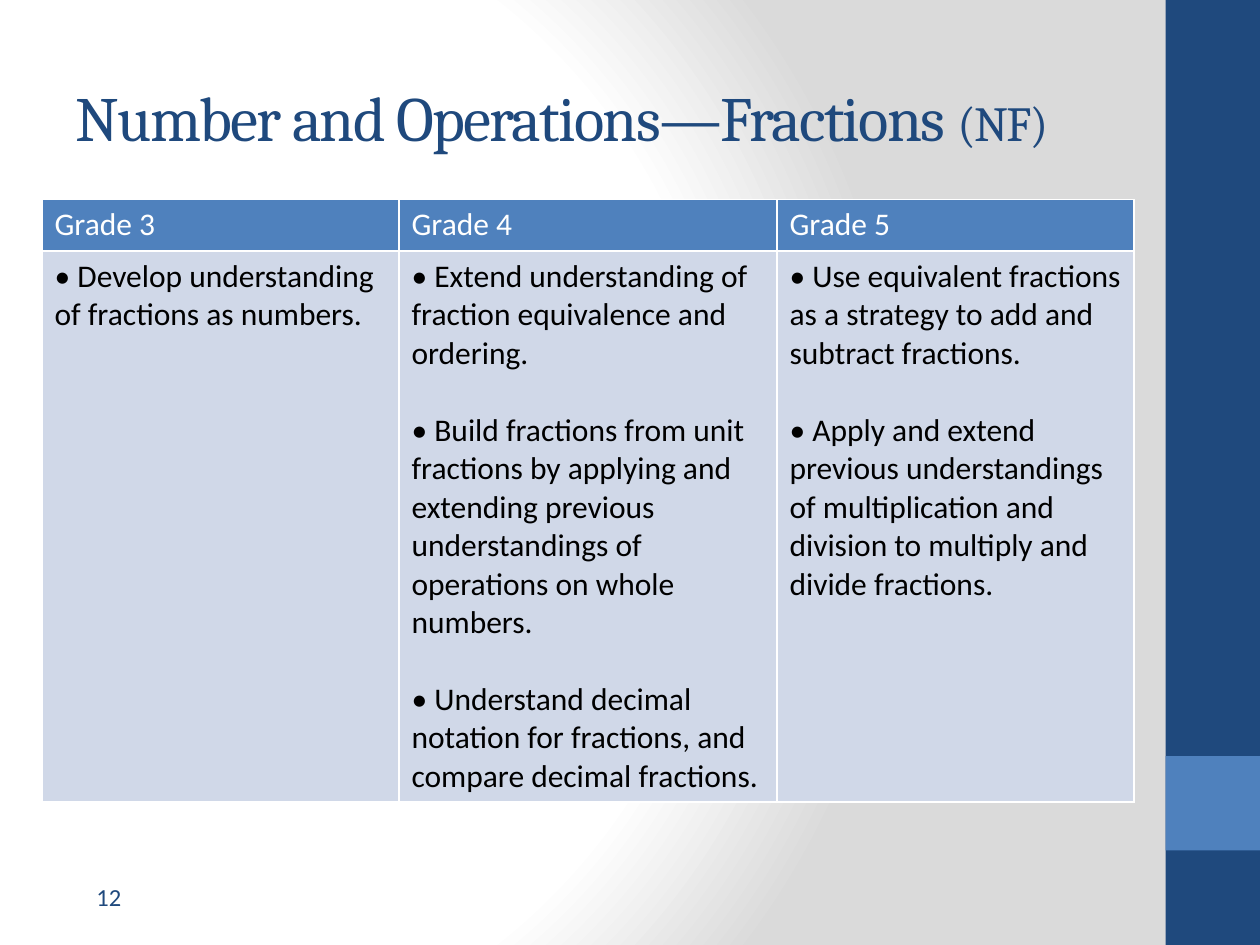
from lxml import etree
from pptx import Presentation
from pptx import util as u
from pptx.dml.color import RGBColor
from pptx.enum import shapes, text
from pptx.oxml import parse_xml
from pptx.oxml.ns import nsdecls, qn

NAVY, BLUE, PALE, WHITE, BLACK = "1F497D", "4F81BD", "D0D8E8", "FFFFFF", "000000"
GRADES = {
    "Grade 3": ["Develop understanding of fractions as numbers."],
    "Grade 4": [
        "Extend understanding of fraction equivalence and ordering.",
        "Build fractions from unit fractions by applying and extending previous "
        "understandings of operations on whole numbers.",
        "Understand decimal notation for fractions, and compare decimal fractions.",
    ],
    "Grade 5": [
        "Use equivalent fractions as a strategy to add and subtract fractions.",
        "Apply and extend previous understandings of multiplication and division "
        "to multiply and divide fractions.",
    ],
}


def color(value):
    return RGBColor.from_string(value)


def points(*values):
    return [u.Pt(value) for value in values]


def paint(item, value):
    item.fill.solid()
    item.fill.fore_color.rgb = color(value)


def add_span(para, words, value, **formats):
    span = para.add_run()
    span.text = words
    span.font.color.rgb = color(value)
    for name, setting in formats.items():
        setattr(span.font, name, setting)
    return span


def set_background(page):
    page.background.fill.gradient()
    stops = "".join(
        f'<a:gs pos="{place * 1000}"><a:srgbClr val="{value}"/></a:gs>'
        for place, value in [(0, WHITE), (75, WHITE), (100, "DADADA")]
    )
    gradient = parse_xml(
        f'<a:gradFill {nsdecls("a")} rotWithShape="1"><a:gsLst>{stops}</a:gsLst>'
        '<a:path path="circle"><a:fillToRect l="20000" t="50000" r="100000" b="50000"/>'
        "</a:path></a:gradFill>"
    )
    old = page.element.find(".//" + qn("a:gradFill"))
    old.getparent().replace(old, gradient)


def add_sidebar(page, left, top, width, height):
    for offset, size, value in [(0, height, NAVY), (height * 0.8, width, BLUE)]:
        band = page.shapes.add_shape(
            shapes.MSO_SHAPE.RECTANGLE, *points(left, top + offset, width, size)
        )
        band.shadow.inherit = False
        band.line.fill.background()
        paint(band, value)


def place_title(page, left, top, width, height):
    title = page.shapes.title
    title.left, title.top, title.width, title.height = points(left, top, width, height)
    title.text_frame.vertical_anchor = text.MSO_ANCHOR.MIDDLE
    para = title.text_frame.paragraphs[0]
    para.alignment = text.PP_ALIGN.LEFT
    for words, size in [("Number and Operations—Fractions ", 36), ("(NF)", 28)]:
        span = add_span(para, words, NAVY, name="Cambria", size=u.Pt(size))
        span.font._element.set("spc", "-100")


def add_borders(cell):
    properties = cell._tc.get_or_add_tcPr()
    for index, side in enumerate(["lnL", "lnR", "lnT", "lnB"]):
        line = etree.Element(qn(f"a:{side}"), w=str(u.Pt(1)))
        fill = etree.SubElement(line, qn("a:solidFill"))
        etree.SubElement(fill, qn("a:srgbClr"), val=WHITE)
        properties.insert(index, line)


def fill_cell(cell, lines, fill, value):
    paint(cell, fill)
    add_borders(cell)
    frame = cell.text_frame
    for index, words in enumerate(lines):
        para = frame.add_paragraph() if index else frame.paragraphs[0]
        para.space_before = u.Pt(22 if index else 0)
        add_span(para, words, value, name="Calibri", size=u.Pt(18))


def add_grades(page, left, top, width, height):
    header, middle = 29.5, 216
    side = (width - middle) / 2
    table = page.shapes.add_table(
        2, len(GRADES), *points(left, top, width, height)
    ).table
    for column, size in zip(table.columns, [side, middle, side]):
        column.width = u.Pt(size)
    for row, size in zip(table.rows, [header, height - header]):
        row.height = u.Pt(size)
    for index, (grade, goals) in enumerate(GRADES.items()):
        fill_cell(table.cell(0, index), [grade], BLUE, WHITE)
        fill_cell(table.cell(1, index), [f"• {goal}" for goal in goals], PALE, BLACK)


def add_page_number(page, left, top, width, height):
    box = page.shapes.add_textbox(*points(left, top, width, height))
    box.text_frame.word_wrap = True
    add_span(box.text_frame.paragraphs[0], "12", NAVY, name="Calibri", size=u.Pt(14))


def main():
    deck = Presentation()
    deck.slide_width, deck.slide_height = points(720, 540)
    page = deck.slides.add_slide(deck.slide_layouts.get_by_name("Title Only"))
    set_background(page)
    add_sidebar(page, 666, 0, 54, 540)
    place_title(page, 36, 21.6, 600, 90)
    add_grades(page, 24, 114, 624, 344)
    add_page_number(page, 48, 500.4, 156, 28.8)
    deck.save("out.pptx")


if __name__ == "__main__":
    main()
